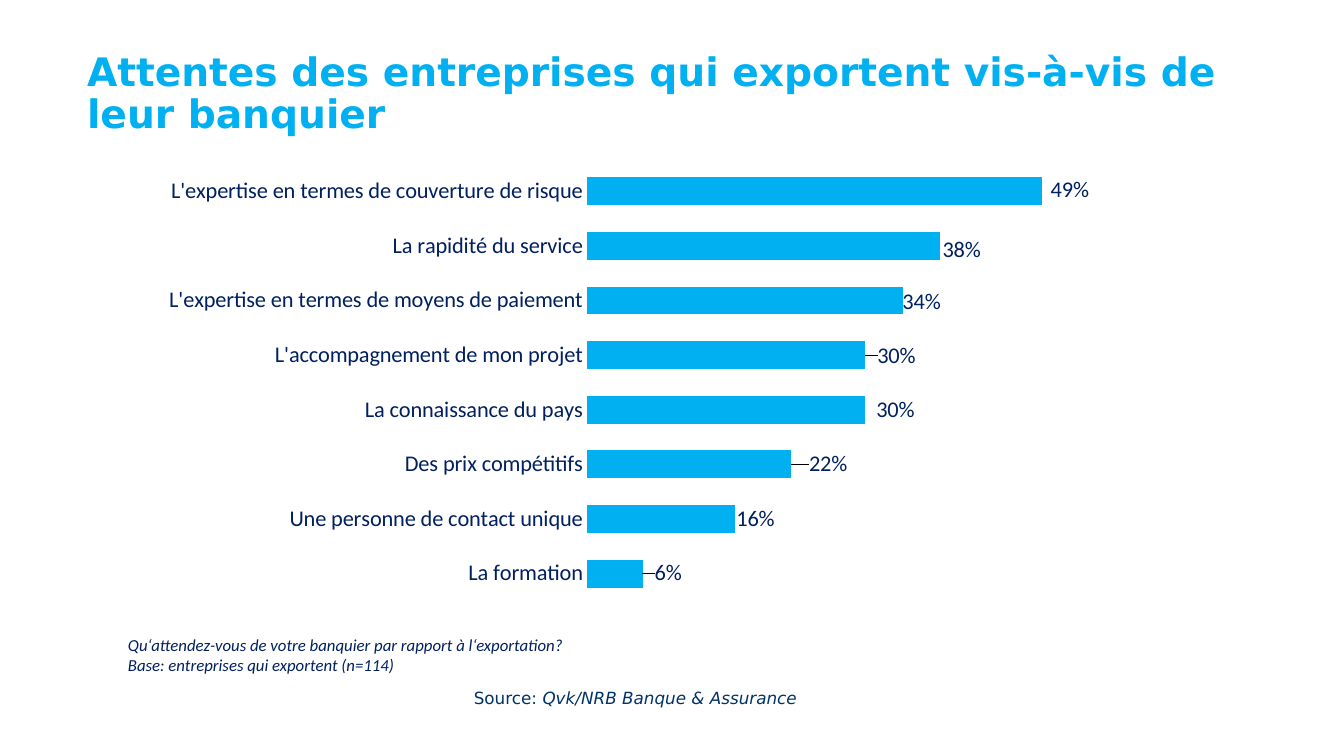
from lxml.etree import SubElement
from pptx import Presentation
from pptx.chart.data import CategoryChartData
from pptx.dml.color import RGBColor
from pptx.enum.chart import XL_CHART_TYPE, XL_LABEL_POSITION, XL_TICK_MARK
from pptx.enum.text import MSO_ANCHOR, MSO_AUTO_SIZE, PP_ALIGN
from pptx.oxml import parse_xml
from pptx.oxml.ns import nsdecls, qn
from pptx.util import Emu, Pt

PX = 9072  # EMU per px at 100.8 px to the inch
CYAN, NAVY, SOURCE_BLUE = "00B0F0", "002060", "003366"
PERCENT = '[<0.04]"";0%'


def style(font, size, name, color, bold=False, italic=False):
    font.size, font.name, font.bold, font.italic = Pt(size), name, bold, italic
    font.color.rgb = RGBColor.from_string(color)


def manual_layout(**settings):
    layout = parse_xml(f"<c:layout {nsdecls('c')}><c:manualLayout/></c:layout>")
    for tag, value in settings.items():
        SubElement(layout[0], qn(f"c:{tag}")).set("val", str(value))
    return layout


prs = Presentation()
prs.slide_width, prs.slide_height = Emu(1344 * PX), Emu(756 * PX)
slide = prs.slides.add_slide(prs.slide_layouts[5])

# Title
title = slide.shapes.title
title.left, title.top, title.width, title.height = (Emu(v * PX) for v in (77, 55, 1210, 80))
title.text_frame.text = "Attentes des entreprises qui exportent vis-à-vis de leur banquier"
title.text_frame.vertical_anchor = MSO_ANCHOR.MIDDLE
title.text_frame.auto_size = MSO_AUTO_SIZE.NONE
heading = title.text_frame.paragraphs[0]
heading.alignment, heading.line_spacing = PP_ALIGN.LEFT, 0.9
style(heading.font, 28, "DejaVu Sans", CYAN, bold=True)

# Source and survey question
notes = [
    ((284, 683, 703, 30), ["Source: "], PP_ALIGN.CENTER, "DejaVu Sans", SOURCE_BLUE, False),
    ((118, 630, 672, 50),
     ["Qu‘attendez-vous de votre banquier par rapport à l‘exportation?",
      "Base: entreprises qui exportent (n=114)"], PP_ALIGN.LEFT, "Calibri", NAVY, True),
]
frames = []
for box, lines, alignment, face, color, italic in notes:
    frame = slide.shapes.add_textbox(*(Emu(v * PX) for v in box)).text_frame
    frame.word_wrap = True
    frame.auto_size = MSO_AUTO_SIZE.SHAPE_TO_FIT_TEXT
    frame.text = "\n".join(lines)
    for paragraph in frame.paragraphs:
        paragraph.alignment = alignment
        style(paragraph.font, 12, face, color, italic=italic)
    frames.append(frame)
institute = frames[0].paragraphs[0].add_run()
institute.text = "Qvk/NRB Banque & Assurance"
institute.font.italic = True

# Expectations: share, then label shift in px from the inner end of the bar
expectations = [
    ("L'expertise en termes de couverture de risque", 0.49, 51, -1),
    ("La rapidité du service", 0.38, 45, 4),
    ("L'expertise en termes de moyens de paiement", 0.34, 42, 2),
    ("L'accompagnement de mon projet", 0.30, 54, 1),
    ("La connaissance du pays", 0.30, 53, 0),
    ("Des prix compétitifs", 0.22, 60, 0),
    ("Une personne de contact unique", 0.16, 43, 0),
    ("La formation", 0.06, 43, 0),
]
CHART_W, CHART_H = 1015, 455
data = CategoryChartData(number_format="0%")
data.categories = [row[0] for row in expectations]
data.add_series("Series 1", [row[1] for row in expectations])
chart = slide.shapes.add_chart(
    XL_CHART_TYPE.BAR_STACKED,
    *(Emu(v * PX) for v in (149, 155, CHART_W, CHART_H)), data).chart
chart.has_legend = chart.has_title = False
style(chart.font, 16, "Calibri", "000000")

# Axes
shares = chart.value_axis
shares.minimum_scale, shares.maximum_scale = 0, 0.6
shares.has_major_gridlines = shares.visible = False
shares.tick_labels.number_format = PERCENT
shares.tick_labels.number_format_is_linked = False
reasons = chart.category_axis
reasons.reverse_order = True
reasons.major_tick_mark = reasons.minor_tick_mark = XL_TICK_MARK.NONE
reasons.format.line.fill.background()
style(reasons.tick_labels.font, 16, "Calibri", NAVY)

# Bars
plot = chart.plots[0]
plot.gap_width, plot.overlap, plot.vary_by_categories = 95, 100, False
bars = plot.series[0]
bars.format.fill.solid()
bars.format.fill.fore_color.rgb = RGBColor.from_string(CYAN)
labels = bars.data_labels
labels.show_value = True
labels.number_format, labels.number_format_is_linked = PERCENT, False
labels.position = XL_LABEL_POSITION.INSIDE_END
style(labels.font, 16, "Calibri", NAVY)
for index in range(len(expectations)):
    label = bars.points[index].data_label
    label.position = XL_LABEL_POSITION.INSIDE_END
    style(label.font, 16, "Calibri", NAVY)

# Label shifts and plot area, as fractions of the chart
chart_xml = chart._chartSpace
for (_, _, dx, dy), label_xml in zip(expectations, chart_xml.xpath(".//c:dLbl")):
    label_xml.insert(1, manual_layout(x=round(dx / CHART_W, 4), y=round(dy / CHART_H, 4)))
plot_area = chart_xml.xpath(".//c:plotArea")[0]
for automatic in plot_area.findall(qn("c:layout")):
    plot_area.remove(automatic)
plot_area.insert(0, manual_layout(
    layoutTarget="inner", xMode="edge", yMode="edge",
    x=round(438 / CHART_W, 4), y=round(9 / CHART_H, 4),
    w=round(557 / CHART_W, 4), h=round(437 / CHART_H, 4)))

prs.save("out.pptx")
